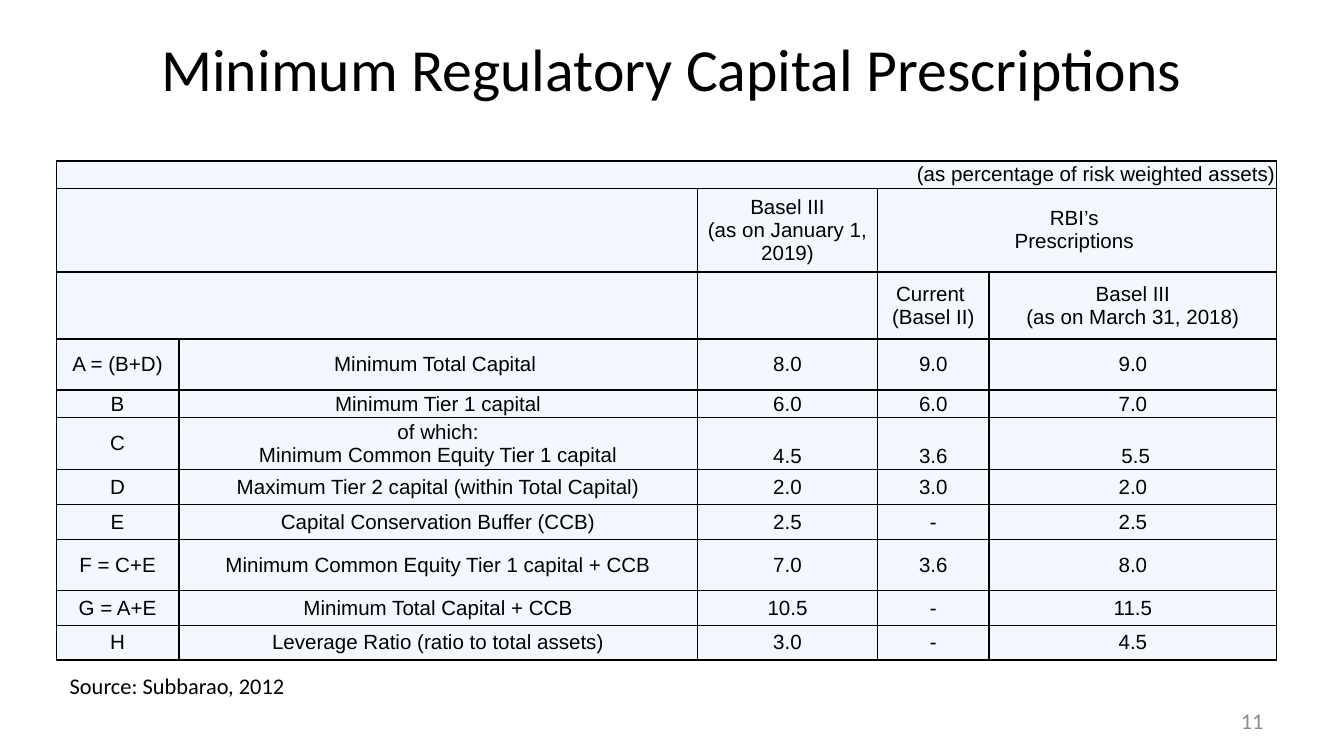
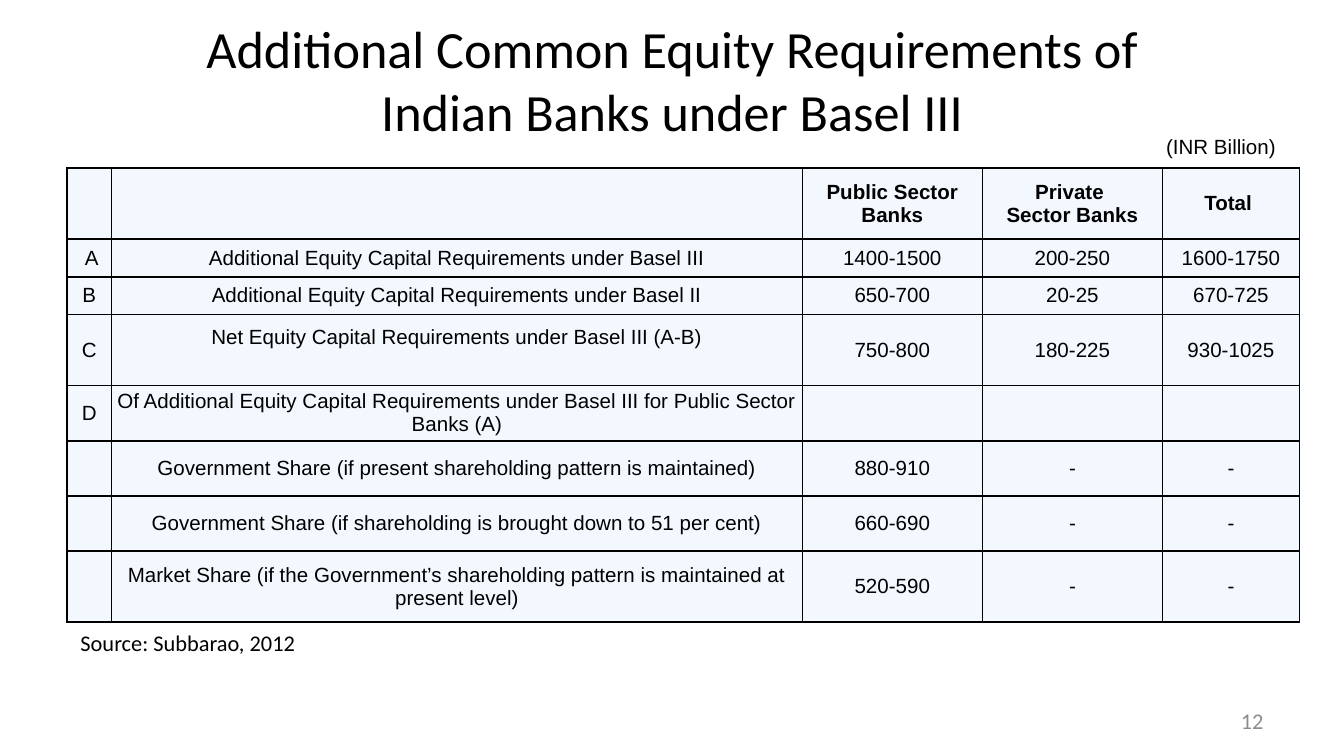
from lxml.etree import SubElement
from pptx import Presentation
from pptx.dml.color import RGBColor
from pptx.enum.text import MSO_ANCHOR, MSO_AUTO_SIZE, PP_ALIGN
from pptx.oxml.ns import qn
from pptx.util import Inches, Pt

BLACK = RGBColor(0x00, 0x00, 0x00)
GRAY = RGBColor(0x8C, 0x8C, 0x8C)
PALE_BLUE = RGBColor(0xF2, 0xF8, 0xFD)
HEADING_FONT = "Calibri"
TABLE_FONT = "Arial"
CELL_INSET = Inches(0.01)


def write_text(frame, text, size=11, font=TABLE_FONT, color=BLACK, bold=False,
               align=PP_ALIGN.CENTER, anchor=MSO_ANCHOR.MIDDLE):
    frame.vertical_anchor = anchor
    paragraph = frame.paragraphs[0]
    paragraph.text = text
    paragraph.alignment = align
    for run in paragraph.runs:
        run.font.size = Pt(size)
        run.font.name = font
        run.font.bold = bold
        run.font.color.rgb = color
    for line_break in paragraph._p.findall(qn("a:br")):
        SubElement(line_break, qn("a:rPr"), sz=str(size * 100))
    SubElement(paragraph._p, qn("a:endParaRPr"), sz=str(size * 100))


def add_grid(slide, left, top, widths, heights, rows):
    frame = slide.shapes.add_table(len(rows), len(widths), Inches(left), Inches(top),
                                   Inches(sum(widths)), Inches(sum(heights)))
    table = frame.table
    table.first_row = False
    table.horz_banding = False
    for column, width in zip(table.columns, widths):
        column.width = Inches(width)
    for row, height, texts in zip(table.rows, heights, rows):
        row.height = Inches(height)
        for cell, text in zip(row.cells, texts):
            cell.margin_left = cell.margin_right = CELL_INSET
            cell.margin_top = cell.margin_bottom = CELL_INSET
            properties = cell._tc.get_or_add_tcPr()
            for side in ("a:lnL", "a:lnR", "a:lnT", "a:lnB"):
                border = SubElement(properties, qn(side), w=str(Pt(1)))
                border_fill = SubElement(border, qn("a:solidFill"))
                SubElement(border_fill, qn("a:srgbClr"), val=str(BLACK))
            cell.fill.solid()
            cell.fill.fore_color.rgb = PALE_BLUE
            if text:
                write_text(cell.text_frame, text)
                cell.vertical_anchor = MSO_ANCHOR.MIDDLE
    return table


presentation = Presentation()
presentation.slide_width = Inches(10)
presentation.slide_height = presentation.slide_width * 9 // 16

capital_rows = [
    ["(as percentage of risk weighted assets)", "", "", "", ""],
    ["", "", "Basel III\n(as on January 1, 2019)", "RBI’s \nPrescriptions ", ""],
    ["", "", "", "Current \n(Basel II)", "Basel III\n(as on March 31, 2018)"],
    ["A = (B+D)", "Minimum Total Capital ", "8.0", "9.0", "9.0"],
    ["B", "Minimum Tier 1 capital", "6.0", "6.0", "7.0"],
    ["C", "of which:\nMinimum Common Equity Tier 1 capital", "\n4.5", "\n3.6", "\n 5.5"],
    ["D", "Maximum Tier 2 capital (within Total Capital)", "2.0", "3.0", "2.0"],
    ["E", "Capital Conservation Buffer (CCB)", "2.5", "-", "2.5"],
    ["F = C+E", "Minimum Common Equity Tier 1 capital + CCB", "7.0", "3.6", "8.0"],
    ["G = A+E", "Minimum Total Capital + CCB", "10.5", "-", "11.5"],
    ["H", "Leverage Ratio (ratio to total assets)", "3.0", "-", "4.5"],
]
equity_rows = [
    ["", "", "Public Sector Banks", "Private \nSector Banks", "Total "],
    [" A", "Additional Equity Capital Requirements under Basel III",
     "1400-1500", "200-250", "1600-1750"],
    ["B", "Additional Equity Capital Requirements under Basel II",
     "650-700", "20-25", "670-725"],
    ["C", "Net Equity Capital Requirements under Basel III (A-B)\n",
     "750-800", "180-225", "930-1025"],
    ["D", "Of Additional Equity Capital Requirements under Basel III for "
     "Public Sector Banks (A)", "", "", ""],
    ["", "Government Share (if present shareholding pattern is maintained)",
     "880-910", "-", "-"],
    ["", "Government Share (if shareholding is brought down to 51 per cent)",
     "660-690", "-", "-"],
    ["", "Market Share (if the Government’s shareholding pattern is maintained "
     "at present level)", "520-590", "-", "-"],
]

pages = [
    {"title": "Minimum Regulatory Capital Prescriptions", "size": 32, "title_top": 0.03,
     "number": "11", "left": 0.42, "top": 1.2, "source_top": 4.95,
     "widths": [0.91, 3.86, 1.34, 0.83, 2.14],
     "heights": [0.2, 0.62, 0.5, 0.38, 0.2, 0.38, 0.26, 0.26, 0.38, 0.26, 0.26],
     "rows": capital_rows},
    {"title": "Additional Common Equity Requirements of\nIndian Banks under Basel III",
     "size": 28, "title_top": 0.12,
     "number": "12", "left": 0.5, "top": 1.25, "source_top": 4.63,
     "widths": [0.33, 5.14, 1.34, 1.34, 1.02],
     "heights": [0.53, 0.28, 0.28, 0.53, 0.41, 0.41, 0.41, 0.53],
     "rows": equity_rows},
]

slides = []
tables = []
for page in pages:
    slide = presentation.slides.add_slide(presentation.slide_layouts[5])
    title = slide.shapes.title
    title.left, title.top = Inches(0.5), Inches(page["title_top"])
    title.width, title.height = Inches(9), Inches(0.94)
    title.text_frame.auto_size = MSO_AUTO_SIZE.NONE
    write_text(title.text_frame, page["title"], size=page["size"], font=HEADING_FONT)

    number = slide.shapes.add_textbox(Inches(7.17), Inches(5.21), Inches(2.33), Inches(0.3))
    number.text_frame.word_wrap = True
    write_text(number.text_frame, page["number"], size=12, font=HEADING_FONT,
               color=GRAY, align=PP_ALIGN.RIGHT)

    tables.append(add_grid(slide, page["left"], page["top"], page["widths"],
                           page["heights"], page["rows"]))

    source = slide.shapes.add_textbox(Inches(page["left"]), Inches(page["source_top"]),
                                      Inches(1.82), Inches(0.3))
    source.text_frame.word_wrap = False
    source.text_frame.auto_size = MSO_AUTO_SIZE.SHAPE_TO_FIT_TEXT
    write_text(source.text_frame, "Source: Subbarao, 2012", size=12, font=HEADING_FONT,
               align=PP_ALIGN.LEFT, anchor=MSO_ANCHOR.TOP)
    slides.append(slide)

capital_table, equity_table = tables
for row, first, last in [(0, 0, 4), (1, 0, 1), (1, 3, 4), (2, 0, 1)]:
    capital_table.cell(row, first).merge(capital_table.cell(row, last))
caption = capital_table.cell(0, 0)
caption.vertical_anchor = MSO_ANCHOR.TOP
caption.text_frame.paragraphs[0].alignment = PP_ALIGN.RIGHT

for column in range(2, 5):
    for run in equity_table.cell(0, column).text_frame.paragraphs[0].runs:
        run.font.bold = True

unit = slides[1].shapes.add_textbox(Inches(8.57), Inches(0.95), Inches(1.03), Inches(0.29))
unit.text_frame.word_wrap = False
unit.text_frame.auto_size = MSO_AUTO_SIZE.SHAPE_TO_FIT_TEXT
write_text(unit.text_frame, "(INR Billion)", anchor=MSO_ANCHOR.TOP)

presentation.save("out.pptx")
